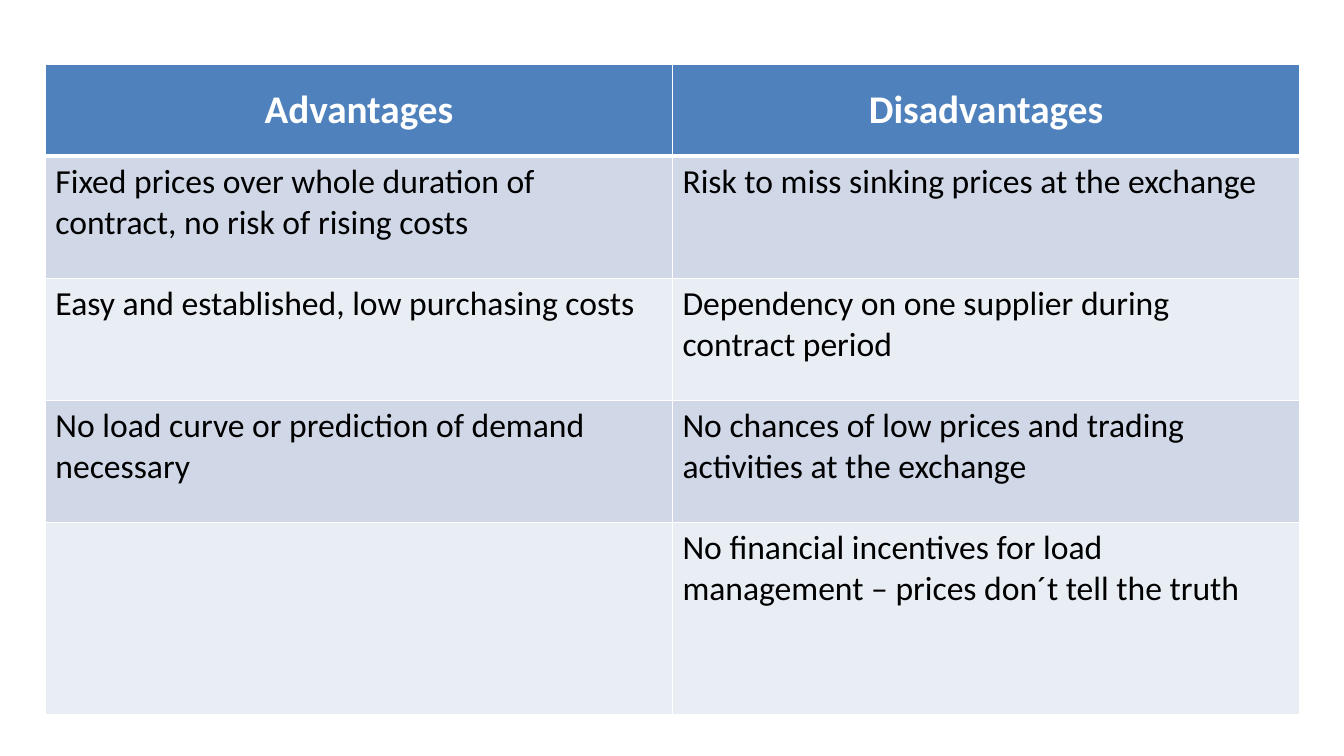
import pptx
import pptx.dml.color
import pptx.enum.text
import pptx.oxml.ns
import pptx.util
from dataclasses import dataclass
from lxml import etree
from pptx.util import Inches


@dataclass(frozen=True)
class Theme:
    font: str = "Calibri"
    header_size: int = 28
    body_size: int = 24
    header_fill: str = "4F81BD"
    bands: tuple = ("D0D8E8", "E9EDF4")
    white: str = "FFFFFF"
    black: str = "000000"
    thin: int = 1
    thick: int = 3


THEME = Theme()

ROWS = [
    ("Advantages", "Disadvantages"),
    ("Fixed prices over whole duration of contract, no risk of rising costs",
     "Risk to miss sinking prices at the exchange"),
    ("Easy and established, low purchasing costs",
     "Dependency on one supplier during contract period"),
    ("No load curve or prediction of demand necessary",
     "No chances of low prices and trading activities at the exchange"),
    ("", "No financial incentives for load management – prices don´t tell the truth"),
]
ROW_HEIGHTS = (0.91, 1.21, 1.21, 1.21, 1.91)
COLUMN_WIDTH = 6.22


def rgb(color):
    return pptx.dml.color.RGBColor.from_string(color)


def write_text(text_frame, text, *, size, color, bold=False, align=None):
    paragraph = text_frame.paragraphs[0]
    paragraph.alignment = align
    if not text:
        return
    run = paragraph.add_run()
    run.text = text
    run.font.name = THEME.font
    run.font.size = pptx.util.Pt(size)
    run.font.bold = bold
    run.font.color.rgb = rgb(color)


def set_borders(cell, **widths):
    """Draw white borders; widths are given in points by side: L, R, T, B."""
    qn = pptx.oxml.ns.qn
    properties = cell._tc.get_or_add_tcPr()
    for side in "LRTB":
        width = pptx.util.Pt(widths.get(side, THEME.thin))
        line = etree.SubElement(properties, qn(f"a:ln{side}"), w=str(int(width)))
        fill = etree.SubElement(line, qn("a:solidFill"))
        etree.SubElement(fill, qn("a:srgbClr"), val=THEME.white)


def fill_cell(cell, color):
    cell.fill.solid()
    cell.fill.fore_color.rgb = rgb(color)


def format_header_cell(cell, text):
    set_borders(cell, B=THEME.thick)
    fill_cell(cell, THEME.header_fill)
    cell.vertical_anchor = pptx.enum.text.MSO_ANCHOR.MIDDLE
    write_text(cell.text_frame, text, size=THEME.header_size, color=THEME.white,
               bold=True, align=pptx.enum.text.PP_ALIGN.CENTER)


def format_body_cell(cell, text, row_number):
    set_borders(cell, T=THEME.thick if row_number == 1 else THEME.thin)
    fill_cell(cell, THEME.bands[(row_number - 1) % 2])
    write_text(cell.text_frame, text, size=THEME.body_size, color=THEME.black)


def add_comparison_table(slide):
    column_count = len(ROWS[0])
    table = slide.shapes.add_table(
        len(ROWS), column_count, Inches(0.45), Inches(0.64),
        Inches(COLUMN_WIDTH * column_count), Inches(sum(ROW_HEIGHTS))).table
    for column in table.columns:
        column.width = Inches(COLUMN_WIDTH)
    for row_number, texts in enumerate(ROWS):
        table.rows[row_number].height = Inches(ROW_HEIGHTS[row_number])
        for column_number, text in enumerate(texts):
            cell = table.cell(row_number, column_number)
            if row_number == 0:
                format_header_cell(cell, text)
            else:
                format_body_cell(cell, text, row_number)


def main():
    # Slide
    presentation = pptx.Presentation()
    presentation.slide_width = Inches(13.33)
    presentation.slide_height = Inches(7.5)
    slide = presentation.slides.add_slide(presentation.slide_layouts[6])

    # Advantages and disadvantages
    add_comparison_table(slide)
    presentation.save("out.pptx")


if __name__ == "__main__":
    main()
